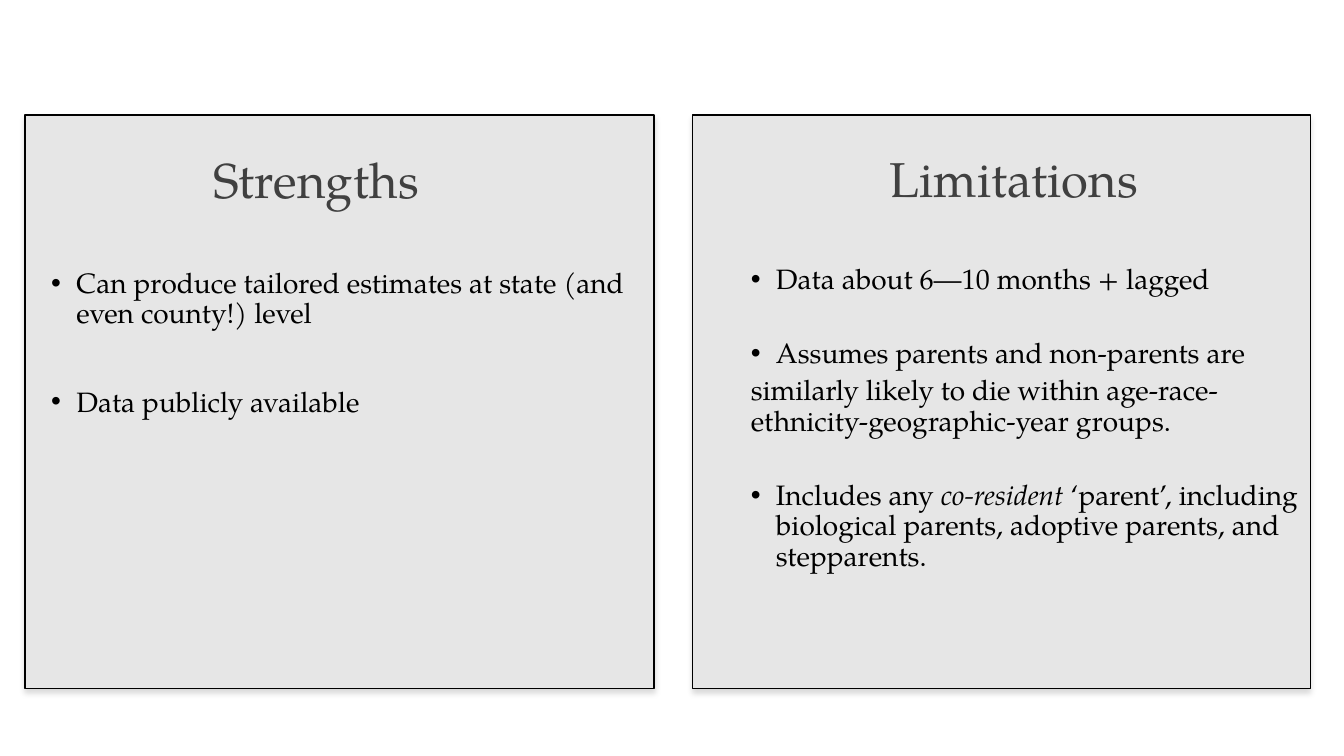
"""Build a slide that sets strengths beside limitations in two panels."""
from dataclasses import dataclass

import lxml.etree
import pptx
import pptx.dml.color
import pptx.enum.shapes
import pptx.enum.text
import pptx.oxml
import pptx.oxml.ns
import pptx.shapes.autoshape
import pptx.slide
import pptx.text.text
import pptx.util

COLORS = {"panel": "E6E6E6", "outline": "000000", "heading": "404040", "body": "000000"}
FONT = "TeX Gyre Pagella"
BODY_SIZE = 20
BODY_LINE = 21.6
INSET = 3.6
HANGING = 18
PANEL_TOP, PANEL_HEIGHT = 82.1, 409.7
ALIGN = pptx.enum.text.PP_ALIGN
ANCHOR = pptx.enum.text.MSO_ANCHOR


@dataclass(frozen=True)
class Box:
    left: float
    top: float
    width: float
    height: float


@dataclass(frozen=True)
class Point:
    phrases: tuple[str, ...]
    bullet: bool = True
    emphasized: int = -1


@dataclass(frozen=True)
class Column:
    heading: str
    heading_align: ALIGN
    panel: Box
    heading_box: Box
    points_box: Box
    margin: float
    spacing: float
    points: tuple[Point, ...]


COLUMNS = (
    Column(
        "Strengths", ALIGN.CENTER,
        Box(18, PANEL_TOP, 449.3, PANEL_HEIGHT),
        Box(118.1, 100.1, 216, 60.5),
        Box(29.5, 157, 434.2, 298.8),
        HANGING, 10,
        (
            Point(("Can produce tailored estimates at state (and even county!) level",)),
            Point(("Data publicly available",)),
        ),
    ),
    Column(
        "Limitations", ALIGN.LEFT,
        Box(494.6, PANEL_TOP, 441.4, PANEL_HEIGHT),
        Box(628.6, 84.2, 199.4, 91.4),
        Box(493.2, 159.1, 462.2, 298.8),
        54, 5,
        (
            Point(("Data about 6—10 months + lagged",)),
            Point(("Assumes parents and non-parents are",)),
            Point(("similarly likely to die within age-race-ethnicity-geographic-year groups.",),
                  bullet=False),
            Point(("Includes any ", "co-resident",
                   " ‘parent’, including biological parents, adoptive parents, and stepparents."),
                  emphasized=1),
        ),
    ),
)


def rgb(name: str) -> pptx.dml.color.RGBColor:
    """Look up a palette colour."""
    return pptx.dml.color.RGBColor.from_string(COLORS[name])


def place(box: Box) -> tuple[pptx.util.Length, ...]:
    """Convert a box to slide lengths."""
    return tuple(pptx.util.Pt(value) for value in (box.left, box.top, box.width, box.height))


def add_text(paragraph: pptx.text.text._Paragraph, text: str, *, size: float,
             color: str, italic: bool = False) -> None:
    """Append a formatted run."""
    run = paragraph.add_run()
    run.text = text
    run.font.name = FONT
    run.font.size = pptx.util.Pt(size)
    run.font.color.rgb = rgb(color)
    run.font.italic = italic


def add_shadow(panel: pptx.shapes.autoshape.Shape) -> None:
    """Give a panel a soft shadow below it."""
    panel.shadow.inherit = False
    effects = panel.element.spPr.find(pptx.oxml.ns.qn("a:effectLst"))
    effects.append(pptx.oxml.parse_xml(
        f'<a:outerShdw {pptx.oxml.ns.nsdecls("a")} blurRad="{pptx.util.Pt(4)}" '
        f'dist="{pptx.util.Pt(3)}" dir="5400000" rotWithShape="0">'
        f'<a:srgbClr val="{COLORS["outline"]}"><a:alpha val="15000"/></a:srgbClr>'
        '</a:outerShdw>'))


def add_panel(slide: pptx.slide.Slide, box: Box) -> None:
    """Draw the grey panel behind a column."""
    panel = slide.shapes.add_shape(pptx.enum.shapes.MSO_SHAPE.RECTANGLE, *place(box))
    panel.fill.solid()
    panel.fill.fore_color.rgb = rgb("panel")
    panel.line.color.rgb = rgb("outline")
    panel.line.width = pptx.util.Pt(1)
    add_shadow(panel)


def add_frame(slide: pptx.slide.Slide, box: Box, anchor: ANCHOR) -> pptx.text.text.TextFrame:
    """Add a wrapping text box and return its frame."""
    frame = slide.shapes.add_textbox(*place(box)).text_frame
    frame.word_wrap = True
    frame.vertical_anchor = anchor
    return frame


def indent(paragraph: pptx.text.text._Paragraph, margin: float, bullet: bool) -> None:
    """Set a hanging bullet, or align plain text with the bullets."""
    properties = paragraph._p.get_or_add_pPr()
    properties.set("marL", str(pptx.util.Pt(margin if bullet else margin - HANGING)))
    properties.set("indent", str(pptx.util.Pt(-HANGING if bullet else 0)))
    if bullet:
        font = lxml.etree.SubElement(properties, pptx.oxml.ns.qn("a:buFont"))
        font.set("typeface", "Arial")
        mark = lxml.etree.SubElement(properties, pptx.oxml.ns.qn("a:buChar"))
        mark.set("char", "•")


def add_points(slide: pptx.slide.Slide, column: Column) -> None:
    """Write the points, leaving one line free above each bullet."""
    frame = add_frame(slide, column.points_box, ANCHOR.TOP)
    frame.margin_top = pptx.util.Pt(INSET + BODY_LINE + column.spacing)
    for index, point in enumerate(column.points):
        paragraph = frame.add_paragraph() if index else frame.paragraphs[0]
        paragraph.line_spacing = 0.9
        gap = 2 * column.spacing + BODY_LINE if point.bullet else column.spacing
        paragraph.space_before = pptx.util.Pt(gap if index else 0)
        indent(paragraph, column.margin, point.bullet)
        for position, phrase in enumerate(point.phrases):
            add_text(paragraph, phrase, size=BODY_SIZE, color="body",
                     italic=position == point.emphasized)


def add_column(slide: pptx.slide.Slide, column: Column) -> None:
    """Draw one panel with its heading and points."""
    add_panel(slide, column.panel)
    heading = add_frame(slide, column.heading_box, ANCHOR.MIDDLE).paragraphs[0]
    heading.alignment = column.heading_align
    heading.line_spacing = 0.9
    add_text(heading, column.heading, size=35, color="heading")
    add_points(slide, column)


def main() -> None:
    """Build and save the slide."""
    deck = pptx.Presentation()
    deck.slide_width, deck.slide_height = pptx.util.Pt(960), pptx.util.Pt(540)
    slide = deck.slides.add_slide(deck.slide_layouts[6])
    for column in COLUMNS:
        add_column(slide, column)
    deck.save("out.pptx")


if __name__ == "__main__":
    main()
